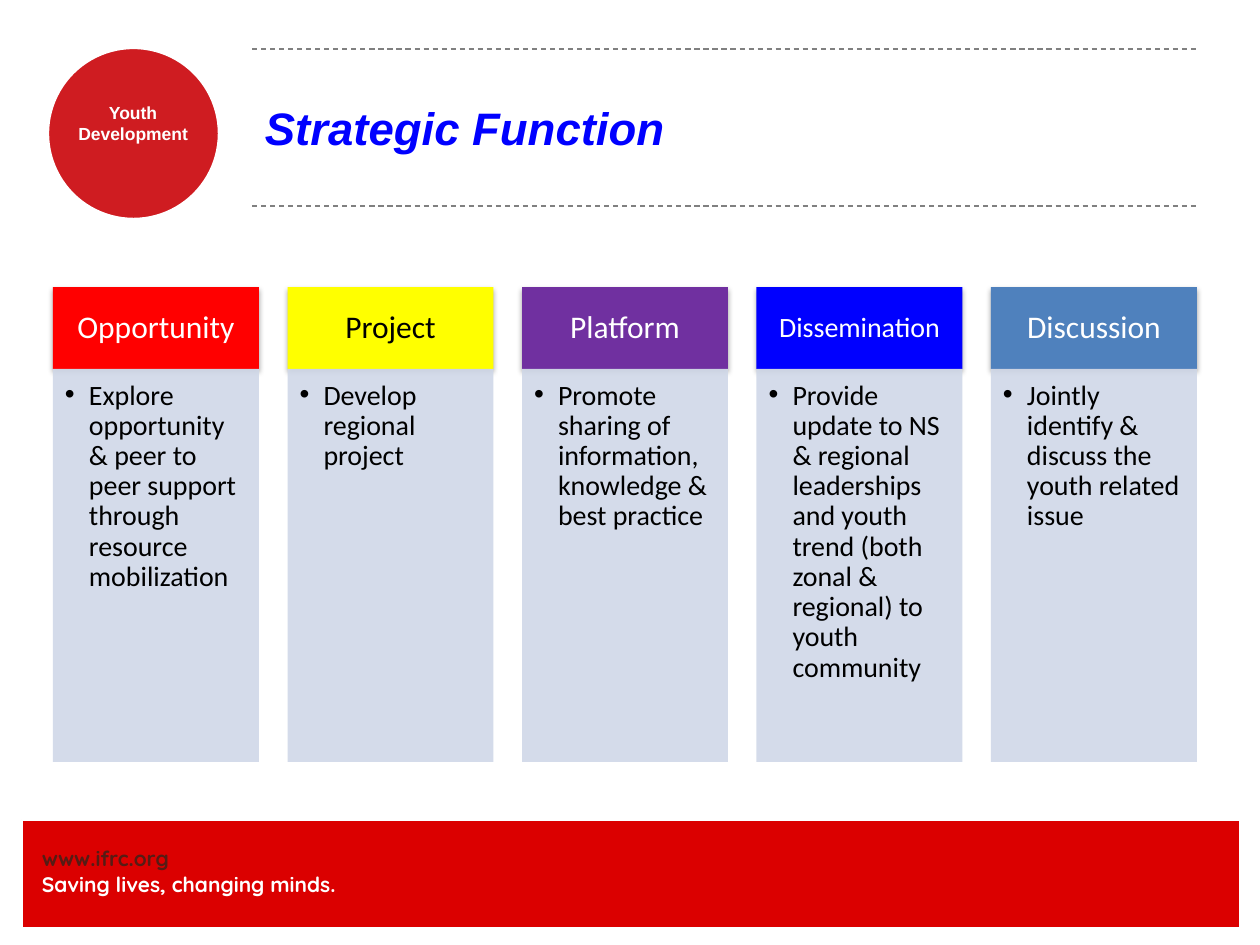
from lxml.etree import SubElement
from pptx import Presentation
from pptx.dml.color import RGBColor
from pptx.enum.dml import MSO_LINE
from pptx.enum.shapes import MSO_CONNECTOR as CONN, MSO_SHAPE as SHAPE
from pptx.enum.text import MSO_ANCHOR as ANCHOR, PP_ALIGN as ALIGN
from pptx.oxml.ns import qn
from pptx.util import Emu, Pt

EMU_PER_PX = 914400 / 126
COLORS = {
    "white": "FFFFFF", "black": "000000", "footer": "DB0000", "link": "551C15",
    "badge": "CF1C21", "rule": "808080", "body": "D0D8E8", "red": "FF0000",
    "yellow": "FFFF00", "purple": "7030A0", "blue": "0000FF", "steel": "4F81BD",
}
COLUMNS = [
    ("Opportunity", "red", "white", 18,
     "Explore opportunity & peer to peer support through resource mobilization"),
    ("Project", "yellow", "black", 18, "Develop regional project"),
    ("Platform", "purple", "white", 18,
     "Promote sharing of information, knowledge & best practice"),
    ("Dissemination", "blue", "white", 16,
     "Provide update to NS & regional leaderships and youth trend "
     "(both zonal & regional) to youth community"),
    ("Discussion", "steel", "white", 18,
     "Jointly identify & discuss the youth related issue"),
]
COLUMN_LEFT, COLUMN_WIDTH, COLUMN_RIGHT = 53, 206, 1197


def px(n):
    return Emu(round(n * EMU_PER_PX))


def rgb(name):
    return RGBColor.from_string(COLORS[name])


def add_block(slide, kind, box, fill, line=None, width=0):
    sp = slide.shapes.add_shape(kind, *map(px, box))
    sp.shadow.inherit = False
    sp.fill.solid()
    sp.fill.fore_color.rgb = rgb(fill)
    if line:
        sp.line.color.rgb = rgb(line)
        sp.line.width = Pt(width)
    else:
        sp.line.fill.background()
    return sp


def add_alpha(color, percent):
    SubElement(color, qn("a:alpha"), val=str(percent * 1000))


def add_shadow(sp):
    effects = sp._element.spPr.find(qn("a:effectLst"))
    shadow = SubElement(effects, qn("a:outerShdw"), blurRad=str(Pt(3.1)),
                        dist=str(Pt(1.8)), dir="5400000", rotWithShape="0")
    add_alpha(SubElement(shadow, qn("a:srgbClr"), val=COLORS["black"]), 35)


def set_frame(sp, insets, anchor=ANCHOR.TOP):
    tf = sp.text_frame
    tf.word_wrap = True
    tf.vertical_anchor = anchor
    tf.margin_left, tf.margin_top, tf.margin_right, tf.margin_bottom = map(px, insets)
    return tf


def add_run(p, text, size, font, color, bold=False, italic=False):
    r = p.add_run()
    r.text = text
    r.font.size = Pt(size)
    r.font.name = font
    r.font.color.rgb = rgb(color)
    r.font.bold = bold
    r.font.italic = italic


def add_label(slide, box, insets=(0, 0, 0, 0), anchor=ANCHOR.TOP):
    return set_frame(slide.shapes.add_textbox(*map(px, box)), insets, anchor)


def add_rule(slide, y):
    line = slide.shapes.add_connector(CONN.STRAIGHT, px(252), px(y), px(1197), px(y))
    line.line.color.rgb = rgb("rule")
    line.line.width = Pt(0.75)
    line.line.dash_style = MSO_LINE.DASH
    SubElement(line._element.spPr, qn("a:effectLst"))


def add_footer(slide):
    add_block(slide, SHAPE.RECTANGLE, (22, 820, 1218, 108), "footer", "white", 0.75)
    tf = add_label(slide, (42, 846, 431, 50))
    add_run(tf.paragraphs[0], "www.ifrc.org", 12, "Quicksand", "link", True)
    add_run(tf.add_paragraph(), "Saving lives, changing minds.", 12, "Quicksand",
            "white", True)


def add_badge(slide):
    add_block(slide, SHAPE.OVAL, (47, 47, 173, 173), "badge", "white", 2.5)
    p = add_label(slide, (54, 102, 158, 43)).paragraphs[0]
    p.alignment = ALIGN.CENTER
    add_run(p, "Youth Development", 10, "Arial", "white", True)


def add_title(slide):
    for y in (49, 206):
        add_rule(slide, y)
    tf = add_label(slide, (252, 48, 945, 158), (13, 6, 13, 6), ANCHOR.MIDDLE)
    add_run(tf.paragraphs[0], "Strategic Function", 26, "Arial", "blue", True, True)


def add_header(slide, x, text, fill, color, size):
    sp = add_block(slide, SHAPE.RECTANGLE, (x, 287, COLUMN_WIDTH, 82), fill)
    add_shadow(sp)
    side, edge = size, size // 2
    p = set_frame(sp, (side, edge, side, edge), ANCHOR.MIDDLE).paragraphs[0]
    p.alignment = ALIGN.CENTER
    p.line_spacing = 0.9
    add_run(p, text, size, "Calibri", color)


def add_body(slide, x, text):
    sp = add_block(slide, SHAPE.RECTANGLE, (x, 369, COLUMN_WIDTH, 393), "body")
    add_alpha(sp._element.spPr.find(qn("a:solidFill"))[0], 90)
    p = set_frame(sp, (12, 12, 15, 18)).paragraphs[0]
    p.alignment = ALIGN.LEFT
    p.line_spacing = 0.9
    pPr = p._p.get_or_add_pPr()
    pPr.set("marL", str(px(24)))
    pPr.set("indent", str(px(-24)))
    SubElement(pPr, qn("a:buFont"), typeface="Arial")
    SubElement(pPr, qn("a:buChar"), char="•")
    add_run(p, text, 16, "Calibri", "black")


def main():
    prs = Presentation()
    prs.slide_width, prs.slide_height = px(1260), px(945)
    slide = prs.slides.add_slide(prs.slide_layouts[6])
    add_footer(slide)
    add_badge(slide)
    add_title(slide)
    pitch = (COLUMN_RIGHT - COLUMN_LEFT - COLUMN_WIDTH) / (len(COLUMNS) - 1)
    for i, (heading, fill, color, size, text) in enumerate(COLUMNS):
        x = COLUMN_LEFT + i * pitch
        add_header(slide, x, heading, fill, color, size)
        add_body(slide, x, text)
    prs.save("out.pptx")


if __name__ == "__main__":
    main()
